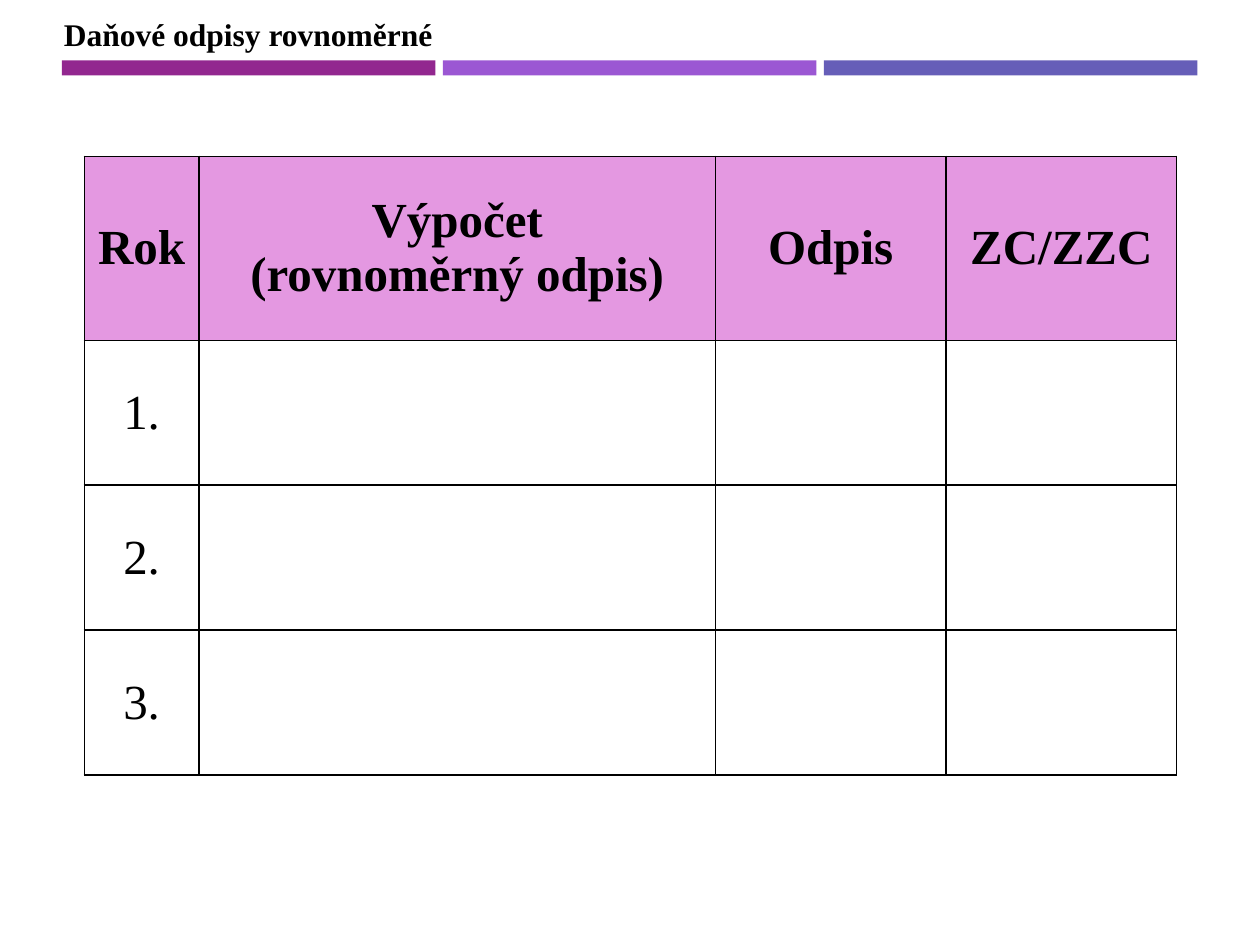
from lxml.etree import SubElement
from pptx import Presentation
from pptx.dml.color import RGBColor
from pptx.enum.shapes import MSO_SHAPE
from pptx.enum.text import MSO_ANCHOR, MSO_AUTO_SIZE, PP_ALIGN
from pptx.oxml.ns import qn
from pptx.util import Cm, Pt

BLACK = RGBColor(0x00, 0x00, 0x00)
HEADER_PINK = RGBColor(0xE4, 0x98, 0xE1)
BAR_COLORS = [
    RGBColor(0x92, 0x27, 0x8F),
    RGBColor(0x9B, 0x57, 0xD3),
    RGBColor(0x66, 0x5E, 0xB8),
]
FONT = "Times New Roman"

TITLE = "Daňové odpisy rovnoměrné"
ROWS = [
    ["Rok", "Výpočet\n(rovnoměrný odpis)", "Odpis", "ZC/ZZC"],
    ["1.", "", "", ""],
    ["2.", "", "", ""],
    ["3.", "", "", ""],
]
COLUMN_WIDTHS = [2.31, 10.41, 4.65, 4.65]
ROW_HEIGHTS = [3.71, 2.92, 2.92, 2.92]
BAR_LEFT, BAR_WIDTH, BAR_PITCH = 1.25, 7.53, 7.68


def add_run(paragraph, text, size, bold):
    run = paragraph.add_run()
    run.text = text
    run.font.name = FONT
    run.font.size = Pt(size)
    run.font.bold = bold
    run.font.color.rgb = BLACK


def add_bars(slide):
    for index, color in enumerate(BAR_COLORS):
        bar = slide.shapes.add_shape(
            MSO_SHAPE.RECTANGLE, Cm(BAR_LEFT + index * BAR_PITCH), Cm(1.22), Cm(BAR_WIDTH), Cm(0.3)
        )
        bar.shadow.inherit = False
        bar.fill.solid()
        bar.fill.fore_color.rgb = color
        bar.line.fill.background()


def add_title(slide):
    frame = slide.shapes.add_textbox(Cm(1.04), Cm(0.18), Cm(8.03), Cm(1.02)).text_frame
    frame.word_wrap = False
    frame.auto_size = MSO_AUTO_SIZE.SHAPE_TO_FIT_TEXT
    add_run(frame.paragraphs[0], TITLE, 18, True)


def set_borders(cell):
    """Draw a thin black line on all four sides; call before the fill is set."""
    properties = cell._tc.get_or_add_tcPr()
    for side in ("a:lnL", "a:lnR", "a:lnT", "a:lnB"):
        line = SubElement(properties, qn(side), w=str(Pt(1)))
        solid_fill = SubElement(line, qn("a:solidFill"))
        SubElement(solid_fill, qn("a:srgbClr"), val=str(BLACK))


def add_depreciation_table(slide):
    table = slide.shapes.add_table(
        len(ROWS), len(COLUMN_WIDTHS), Cm(1.7), Cm(3.15), Cm(sum(COLUMN_WIDTHS)), Cm(sum(ROW_HEIGHTS))
    ).table
    for column, width in zip(table.columns, COLUMN_WIDTHS):
        column.width = Cm(width)
    for row, height in zip(table.rows, ROW_HEIGHTS):
        row.height = Cm(height)
    for row_index, texts in enumerate(ROWS):
        is_header = row_index == 0
        for column_index, text in enumerate(texts):
            cell = table.cell(row_index, column_index)
            set_borders(cell)
            if is_header:
                cell.fill.solid()
                cell.fill.fore_color.rgb = HEADER_PINK
            else:
                cell.fill.background()
            if text:
                fill_cell(cell, text, is_header)


def fill_cell(cell, text, bold):
    cell.vertical_anchor = MSO_ANCHOR.MIDDLE
    cell.margin_left = cell.margin_right = Cm(0.18)
    cell.margin_top = cell.margin_bottom = 0
    frame = cell.text_frame
    for index, line in enumerate(text.split("\n")):
        paragraph = frame.add_paragraph() if index else frame.paragraphs[0]
        paragraph.alignment = PP_ALIGN.CENTER
        add_run(paragraph, line, 28, bold)


def main():
    presentation = Presentation()
    presentation.slide_width = Cm(25.4)
    presentation.slide_height = Cm(19.05)
    slide = presentation.slides.add_slide(presentation.slide_layouts[6])
    add_bars(slide)
    add_title(slide)
    add_depreciation_table(slide)
    presentation.save("out.pptx")


if __name__ == "__main__":
    main()
